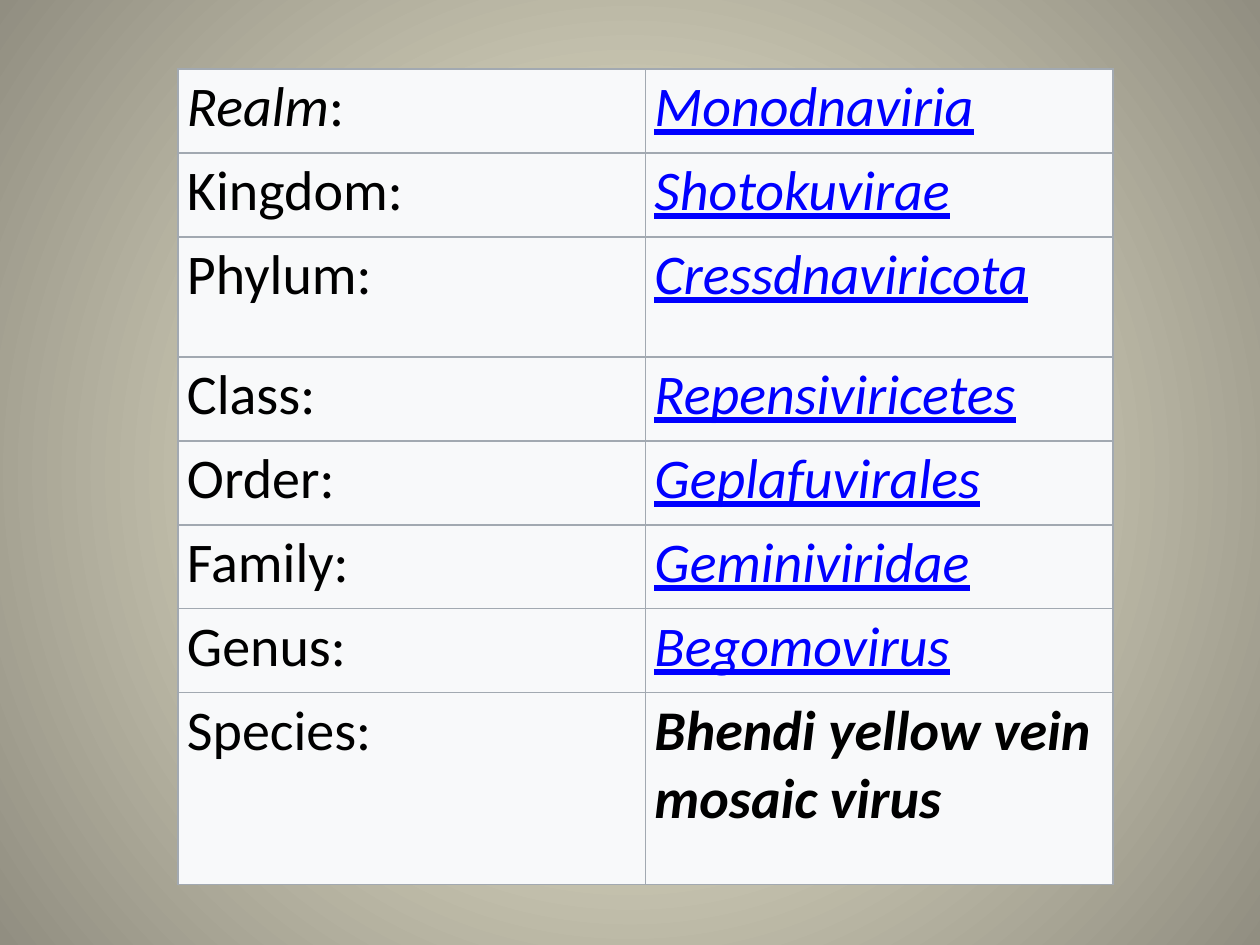
import pptx
import pptx.dml.color
import pptx.oxml
import pptx.oxml.ns
import pptx.util

RGBColor = pptx.dml.color.RGBColor
BLACK = RGBColor(0x00, 0x00, 0x00)
LINK_BLUE = RGBColor(0x00, 0x00, 0xFF)
CELL_FILL = RGBColor(0xF8, 0xF9, 0xFA)
BORDER_GREY = RGBColor(0xA2, 0xA9, 0xB1)
GLOW_CENTER = RGBColor(0xFC, 0xF7, 0xDD)
GLOW_EDGE = RGBColor(0x91, 0x8E, 0x81)

PX_PER_INCH = 126
FONT = "Calibri"
TABLE_BOX = (178, 69, 935, 816)
ROW_HEIGHT = 84
TALL_ROWS = {"Phylum": 120, "Species": 192}
TAXA = [
    ("Realm", "Monodnaviria"),
    ("Kingdom", "Shotokuvirae"),
    ("Phylum", "Cressdnaviricota"),
    ("Class", "Repensiviricetes"),
    ("Order", "Geplafuvirales"),
    ("Family", "Geminiviridae"),
    ("Genus", "Begomovirus"),
    ("Species", "Bhendi yellow vein mosaic virus"),
]


def px(length):
    return pptx.util.Emu(round(length * 914400 / PX_PER_INCH))


def add_text(para, text, size=32, color=BLACK, bold=False, italic=False, underline=False):
    span = para.add_run()
    span.text = text
    font = span.font
    font.name = FONT
    font.size = pptx.util.Pt(size)
    font.color.rgb = color
    font.bold = bold
    font.italic = italic
    font.underline = underline


def paint_background(page):
    fill = page.background.fill
    fill.gradient()
    for stop, color in zip(fill.gradient_stops, (GLOW_CENTER, GLOW_EDGE)):
        stop.color.rgb = color
    namespace = pptx.oxml.ns.nsdecls("a")
    radial = pptx.oxml.parse_xml(
        f'<a:path {namespace} path="circle">'
        '<a:fillToRect l="50000" t="50000" r="50000" b="50000"/></a:path>'
    )
    linear = page.background._cSld.find(".//" + pptx.oxml.ns.qn("a:lin"))
    linear.getparent().replace(linear, radial)


def format_cell(cell):
    cell.margin_left = cell.margin_right = px(9)
    cell.margin_top = cell.margin_bottom = px(4)
    properties = cell._tc.get_or_add_tcPr()
    namespace = pptx.oxml.ns.nsdecls("a")
    for side in ("lnL", "lnR", "lnT", "lnB"):
        properties.append(pptx.oxml.parse_xml(
            f'<a:{side} {namespace} w="{pptx.util.Pt(0.75)}"><a:solidFill>'
            f'<a:srgbClr val="{BORDER_GREY}"/></a:solidFill></a:{side}>'
        ))
    cell.fill.solid()
    cell.fill.fore_color.rgb = CELL_FILL


def add_taxonomy_table(page, box):
    left, top, width, height = box
    table = page.shapes.add_table(
        len(TAXA), 2, px(left), px(top), px(width), px(height)
    ).table
    table.first_row = False
    table.horz_banding = False
    for column in table.columns:
        column.width = px(width / 2)
    for index, (rank, taxon) in enumerate(TAXA):
        table.rows[index].height = px(TALL_ROWS.get(rank, ROW_HEIGHT))
        rank_cell, taxon_cell = table.cell(index, 0), table.cell(index, 1)
        format_cell(rank_cell)
        format_cell(taxon_cell)
        rank_para = rank_cell.text_frame.paragraphs[0]
        taxon_para = taxon_cell.text_frame.paragraphs[0]
        if rank == "Realm":
            add_text(rank_para, rank, italic=True)
            add_text(rank_para, ":")
        else:
            add_text(rank_para, f"{rank}:")
        if rank == "Species":
            add_text(taxon_para, taxon, bold=True, italic=True)
        else:
            add_text(taxon_para, taxon, color=LINK_BLUE, italic=True, underline=True)


def main():
    deck = pptx.Presentation()
    deck.slide_width, deck.slide_height = px(1260), px(945)
    page = deck.slides.add_slide(deck.slide_layouts[6])
    paint_background(page)
    add_taxonomy_table(page, TABLE_BOX)
    deck.save("out.pptx")


if __name__ == "__main__":
    main()
